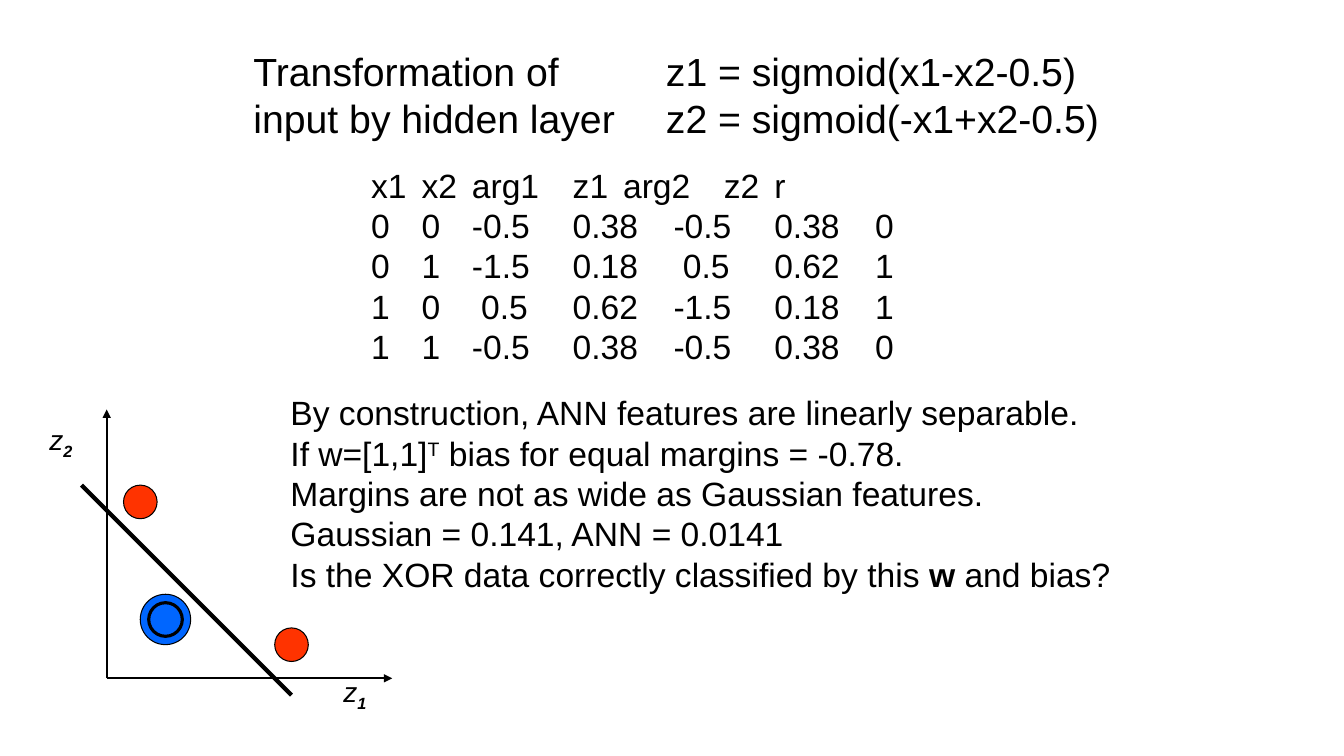
from pptx import Presentation
from pptx.dml.color import RGBColor
from pptx.enum.shapes import MSO_CONNECTOR, MSO_SHAPE
from pptx.enum.text import MSO_AUTO_SIZE
from pptx.oxml.ns import qn
from pptx.util import Inches, Pt
from lxml.etree import SubElement

CELL = Inches(1) / 12
COLS, ROWS = 160, 90
LEFT, BASE = 12.7, 80.75
BLACK, RED, BLUE = "000000", "FF3300", "0066FF"

HEAD = ["Transformation of", "input by hidden layer"]
RULES = ["z1 = sigmoid(x1-x2-0.5)", "z2 = sigmoid(-x1+x2-0.5)"]
DATA = [
    ["x1", "x2", "arg1", "z1", "arg2", "z2", "r"],
    ["0", "0", "-0.5", "0.38", "-0.5", "0.38", "0"],
    ["0", "1", "-1.5", "0.18", " 0.5", "0.62", "1"],
    ["1", "0", " 0.5", "0.62", "-1.5", "0.18", "1"],
    ["1", "1", "-0.5", "0.38", "-0.5", "0.38", "0"],
]
NOTES = [
    [("By construction, ANN features are linearly separable.", {})],
    [("If w=[1,1]", {}), ("T", {"base": 30}),
     (" bias for equal margins = -0.78.", {})],
    [("Margins are not as wide as Gaussian features.", {})],
    [("Gaussian = 0.141, ANN = 0.0141", {})],
    [("Is the XOR data correctly classified by this ", {}),
     ("w", {"bold": True}), (" and bias?", {})],
]


def span(*cells):
    return [round(n * CELL) for n in cells]


def color(code):
    return RGBColor.from_string(code)


def plain(lines):
    return [[(line, {})] for line in lines]


def add_run(para, words, size, bold=False, slant=False, base=0):
    run = para.add_run()
    run.text = words
    font = run.font
    font.name, font.size = "Arial", Pt(size)
    font.bold, font.italic = bold, slant
    font.color.rgb = color(BLACK)
    if base:
        run._r.get_or_add_rPr().set("baseline", str(base * 1000))


def add_text(slide, box, lines, size, wrap=False):
    frame = slide.shapes.add_textbox(*span(*box)).text_frame
    frame.word_wrap = wrap
    frame.auto_size = MSO_AUTO_SIZE.SHAPE_TO_FIT_TEXT
    for row, line in enumerate(lines):
        para = frame.add_paragraph() if row else frame.paragraphs[0]
        for words, style in line:
            add_run(para, words, size, **style)


def add_line(slide, start, end, width, arrow=False):
    ends = [LEFT + start[0], BASE + start[1], LEFT + end[0], BASE + end[1]]
    line = slide.shapes.add_connector(MSO_CONNECTOR.STRAIGHT, *span(*ends))
    line.line.color.rgb = color(BLACK)
    line.line.width = Pt(width)
    if arrow:
        SubElement(line.line._get_or_add_ln(), qn("a:tailEnd"), type="triangle")
    SubElement(line._element.spPr, qn("a:effectLst"))


def add_dot(slide, col, row, size, fill=None, width=0.75):
    box = span(LEFT + col, BASE + row, size, size)
    dot = slide.shapes.add_shape(MSO_SHAPE.OVAL, *box)
    dot.shadow.inherit = False
    if fill:
        dot.fill.solid()
        dot.fill.fore_color.rgb = color(fill)
    else:
        dot.fill.background()
    dot.line.color.rgb = color(BLACK)
    dot.line.width = Pt(width)


def add_label(slide, col, row, digit):
    line = [("z", {"slant": True}),
            (digit, {"slant": True, "bold": True, "base": -25})]
    add_text(slide, (LEFT + col, BASE + row, 6.25, 5.2), [line], 20, True)


def add_plot(slide):
    for end in ((34, 0), (0, -32)):
        add_line(slide, (0, 0), end, 1.5, True)
    add_dot(slide, 2, -23, 4, RED)
    add_dot(slide, 20, -6, 4, RED)
    add_dot(slide, 4, -10, 6, BLUE)
    add_dot(slide, 5, -9, 4, width=2.25)
    add_label(slide, -8, -31, "2")
    add_label(slide, 27, -1, "1")
    add_line(slide, (-3, -23), (22, 2), 3)


def main():
    deck = Presentation()
    deck.slide_width, deck.slide_height = span(COLS, ROWS)
    slide = deck.slides.add_slide(deck.slide_layouts[6])
    add_text(slide, (29, 5, 45.6, 12.4), plain(HEAD), 28)
    table = plain("\t".join(row) for row in DATA)
    add_text(slide, (43, 19, 77.4, 25.4), table, 24)
    add_text(slide, (78.1, 5, 54.1, 12.4), plain(RULES), 28)
    add_plot(slide)
    add_text(slide, (33.4, 46.1, 114, 25.4), NOTES, 24, True)
    deck.save("out.pptx")


if __name__ == "__main__":
    main()
